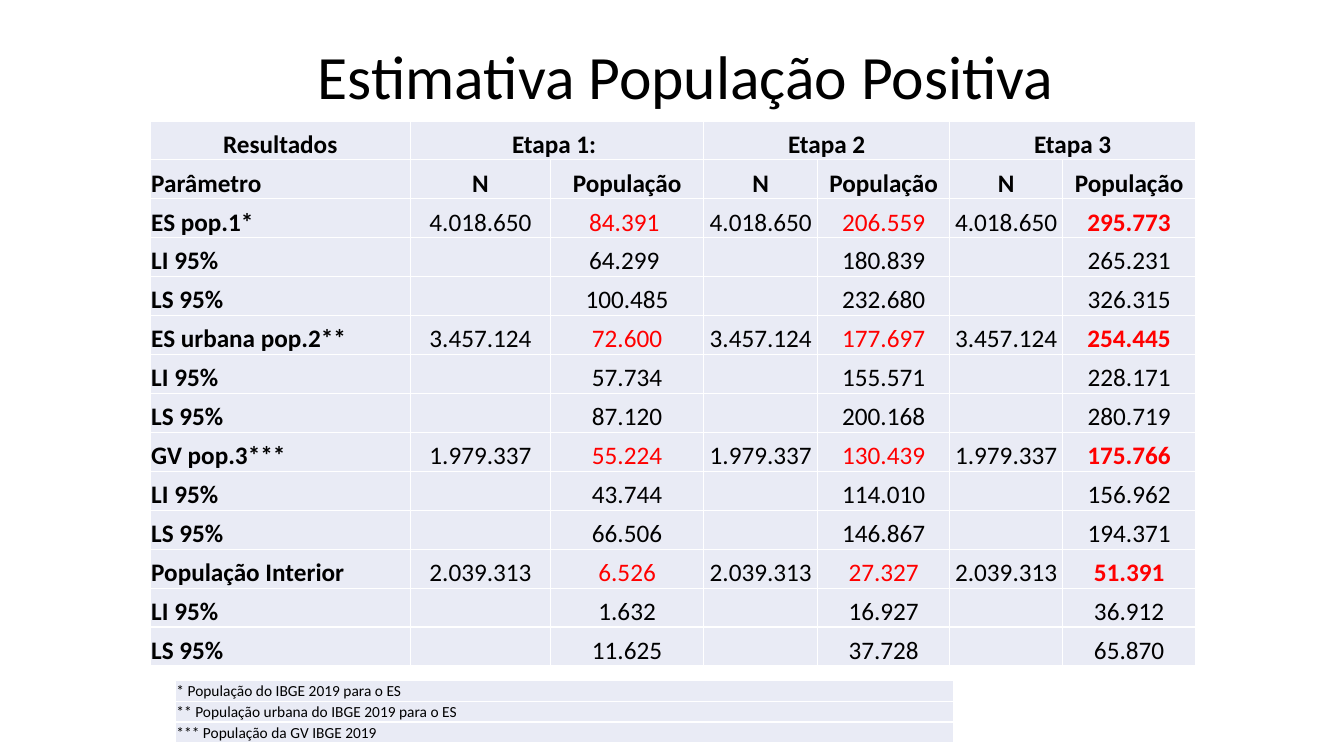
from lxml import etree
from pptx import Presentation
from pptx import util as u
from pptx.dml.color import RGBColor
from pptx.enum import text
from pptx.oxml.ns import qn

HUES = {"ink": "000000", "red": "FF0000", "cell": "E9EBF5", "edge": "FFFFFF"}
FONT = "Calibri"
MID = text.PP_ALIGN.CENTER
LEFT = text.PP_ALIGN.LEFT

GROUPS = [
    ("ES pop.1*", "4.018.650", [
        ("84.391 ", "206.559", "295.773"),
        ("64.299 ", "180.839", "265.231"),
        ("100.485", "232.680", "326.315")]),
    ("ES urbana pop.2**", "3.457.124", [
        ("72.600", "177.697", "254.445"),
        ("57.734", "155.571", "228.171"),
        ("87.120", "200.168", "280.719")]),
    ("GV pop.3***", "1.979.337", [
        ("55.224", "130.439", "175.766"),
        ("43.744", "114.010", "156.962"),
        ("66.506", "146.867", "194.371")]),
    ("População Interior", "2.039.313", [
        ("6.526", "27.327", "51.391"),
        ("1.632", "16.927", "36.912"),
        ("11.625", "37.728", "65.870")]),
]
NOTES = [
    "* População do IBGE 2019 para o ES",
    "** População urbana do IBGE 2019 para o ES",
    "*** População da GV IBGE 2019",
]


class Deck:
    """Hold the slide and its style, and draw each kind of element."""

    def __init__(self):
        self.prs = Presentation()
        self.prs.slide_width = u.Inches(13.33)
        self.prs.slide_height = u.Inches(7.5)
        self.slide = self.prs.slides.add_slide(self.prs.slide_layouts[5])

    def put(self, para, words, size, hue="ink", bold=False, align=LEFT):
        para.alignment = align
        run = para.add_run()
        run.text = words
        run.font.name = FONT
        run.font.size = u.Pt(size)
        run.font.bold = bold
        run.font.color.rgb = RGBColor.from_string(HUES[hue])

    def title(self, words, left, top, width, height):
        box = self.slide.shapes.title
        box.left, box.top = u.Inches(left), u.Inches(top)
        box.width, box.height = u.Inches(width), u.Inches(height)
        frame = box.text_frame
        frame.auto_size = text.MSO_AUTO_SIZE.NONE
        frame.vertical_anchor = text.MSO_ANCHOR.MIDDLE
        frame.paragraphs[0].line_spacing = 0.9
        self.put(frame.paragraphs[0], words, 44, align=MID)

    def table(self, left, top, height, widths, rows):
        spot = [u.Inches(n) for n in (left, top, sum(widths), height)]
        grid = self.slide.shapes.add_table(rows, len(widths), *spot).table
        grid.first_row = grid.horz_banding = False
        for col, width in zip(grid.columns, widths):
            col.width = u.Inches(width)
        for cell in grid.iter_cells():
            self.style(cell)
        return grid

    def style(self, cell):
        cell.margin_left = cell.margin_right = cell.margin_top = u.Inches(0.01)
        cell.margin_bottom = 0
        cell.vertical_anchor = text.MSO_ANCHOR.BOTTOM
        props = cell._tc.get_or_add_tcPr()
        for side in ("lnL", "lnR", "lnT", "lnB"):
            line = etree.SubElement(props, qn("a:" + side), w=str(u.Pt(1)))
            fill = etree.SubElement(line, qn("a:solidFill"))
            etree.SubElement(fill, qn("a:srgbClr"), val=HUES["edge"])
        cell.fill.solid()
        cell.fill.fore_color.rgb = RGBColor.from_string(HUES["cell"])

    def fill(self, cell, words, size=18, **look):
        self.put(cell.text_frame.paragraphs[0], words, size, **look)

    def results(self):
        widths = [2.58, 1.39, 1.52, 1.13, 1.31, 1.12, 1.32]
        grid = self.table(1.49, 1.2, 5.41, widths, 2 + 3 * len(GROUPS))
        self.fill(grid.cell(0, 0), "Resultados", bold=True, align=MID)
        self.fill(grid.cell(1, 0), "Parâmetro", bold=True)
        for step, name in enumerate(("Etapa 1: ", "Etapa 2", "Etapa 3")):
            col = 1 + 2 * step
            grid.cell(0, col).merge(grid.cell(0, col + 1))
            self.fill(grid.cell(0, col), name, bold=True, align=MID)
            for side, head in enumerate(("N", "População")):
                self.fill(grid.cell(1, col + side), head, bold=True, align=MID)
        for num, group in enumerate(GROUPS):
            self.group(grid, 2 + 3 * num, *group)

    def group(self, grid, top, name, total, lines):
        for part, label in enumerate((name, "LI 95%", "LS 95%")):
            row, main = top + part, part == 0
            self.fill(grid.cell(row, 0), label, bold=True)
            for step, value in enumerate(lines[part]):
                col = 1 + 2 * step
                if main:
                    self.fill(grid.cell(row, col), total, align=MID)
                self.fill(grid.cell(row, col + 1), value, align=MID,
                          hue="red" if main else "ink",
                          bold=main and step == 2)

    def notes(self):
        grid = self.table(1.74, 6.75, 0.62, [7.72], len(NOTES))
        for row, note in enumerate(NOTES):
            self.fill(grid.cell(row, 0), note, size=11)


def main():
    deck = Deck()
    deck.title("Estimativa População Positiva", 1.19, 0.24, 11.23, 1.1)
    deck.results()
    deck.notes()
    deck.prs.save("out.pptx")


if __name__ == "__main__":
    main()
